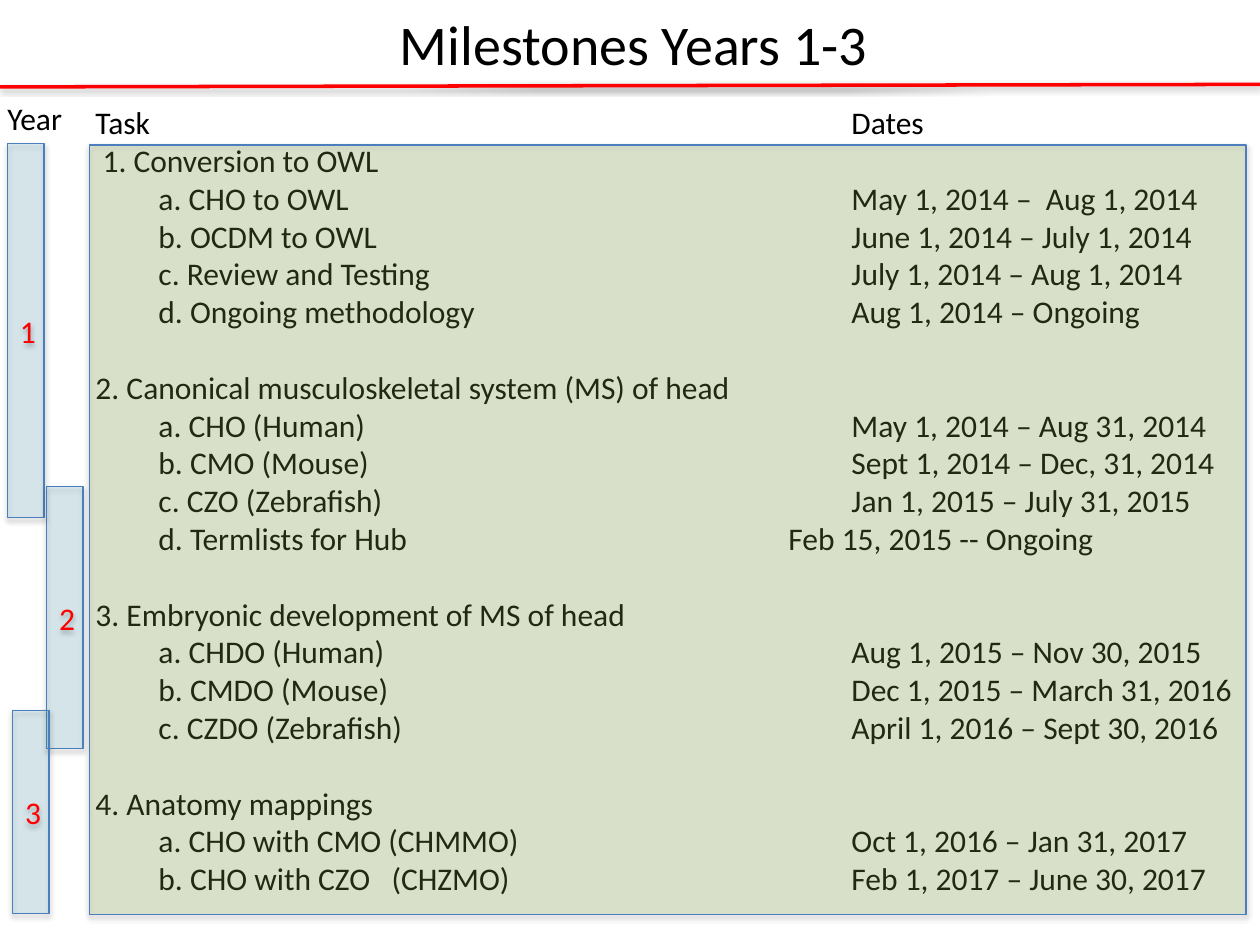
from lxml.etree import SubElement
from pptx import Presentation
from pptx.dml.color import RGBColor
from pptx.enum.shapes import MSO_CONNECTOR as LINE, MSO_SHAPE as SHAPE
from pptx.enum.text import MSO_ANCHOR as ANCHOR, PP_ALIGN as ALIGN
from pptx.oxml.ns import qn
from pptx.util import Inches, Pt

# Content
TITLE = "Milestones Years 1-3"
HEADER = ("Task", "Dates")
MILESTONES = [
    ("\u00a01. Conversion to OWL".replace("\u00a0", " "), [
        ("a. CHO to OWL", "May 1, 2014 –  Aug 1, 2014"),
        ("b. OCDM to OWL", "June 1, 2014 – July 1, 2014"),
        ("c. Review and Testing", "July 1, 2014 – Aug 1, 2014"),
        ("d. Ongoing methodology", "Aug 1, 2014 – Ongoing"),
    ]),
    ("2. Canonical musculoskeletal system (MS) of head", [
        ("a. CHO (Human)", "May 1, 2014 – Aug 31, 2014"),
        ("b. CMO (Mouse)", "Sept 1, 2014 – Dec, 31, 2014"),
        ("c. CZO (Zebrafish)", "Jan 1, 2015 – July 31, 2015"),
        ("d. Termlists for Hub", "Feb 15, 2015 -- Ongoing"),
    ]),
    ("3. Embryonic development of MS of head", [
        ("a. CHDO (Human)", "Aug 1, 2015 – Nov 30, 2015"),
        ("b. CMDO (Mouse)", "Dec 1, 2015 – March 31, 2016"),
        ("c. CZDO (Zebrafish)", "April 1, 2016 – Sept 30, 2016"),
    ]),
    ("4. Anatomy mappings", [
        ("a. CHO with CMO (CHMMO)", "Oct 1, 2016 – Jan 31, 2017"),
        ("b. CHO with CZO   (CHZMO)", "Feb 1, 2017 – June 30, 2017"),
    ]),
]
YEARS = [  # label, left, top, height
    ("1", 0.06, 1.14, 2.97),
    ("2", 0.37, 3.86, 2.08),
    ("3", 0.10, 5.64, 1.61),
]
YEAR_WIDTH = 0.29
TASK_TAB, DATE_TAB = 0.5, 6.0
EARLY_DATES = {"d. Termlists for Hub": 5.5}
LINE_PITCH = 21.6


def color(value):
    return RGBColor.from_string(value)


def style(para, size=18, ink="000000"):
    for span in para.runs:
        span.font.name = "Calibri"
        span.font.size = Pt(size)
        span.font.color.rgb = color(ink)


def add_shadow(properties, alpha, distance):
    effects = properties.find(qn("a:effectLst"))
    if effects is None:
        effects = SubElement(properties, qn("a:effectLst"))
    shadow = SubElement(effects, qn("a:outerShdw"), blurRad=str(Pt(3.1)),
                        dist=str(Pt(distance)), dir="5400000", rotWithShape="0")
    tint = SubElement(shadow, qn("a:srgbClr"), val="000000")
    SubElement(tint, qn("a:alpha"), val=str(alpha * 1000))


def add_panel(page, place, fill, alpha):
    panel = page.shapes.add_shape(SHAPE.RECTANGLE, *map(Inches, place))
    panel.fill.solid()
    panel.fill.fore_color.rgb = color(fill)
    tint = panel.fill._xPr.find(qn("a:solidFill"))[0]
    SubElement(tint, qn("a:alpha"), val=str(alpha * 1000))
    panel.line.color.rgb = color("4B7EBC")
    panel.line.width = Pt(0.75)
    panel.shadow.inherit = False
    add_shadow(panel._element.spPr, 35, 1.8)
    return panel


def add_text(page, place, text, size=18, align=None, wrap=True):
    box = page.shapes.add_textbox(*map(Inches, place))
    box.text_frame.word_wrap = wrap
    para = box.text_frame.paragraphs[0]
    para.text = text
    para.alignment = align
    style(para, size)
    return box


def set_tabs(para, stops):
    tabs = SubElement(para._p.get_or_add_pPr(), qn("a:tabLst"))
    for stop in stops:
        SubElement(tabs, qn("a:tab"), pos=str(Inches(stop)), algn="l")


def add_line(frame, text, stops=(), gap=0):
    para = frame.add_paragraph()
    para.text = text
    para.space_before = Pt(gap)
    set_tabs(para, stops)
    style(para)


deck = Presentation()
deck.slide_width, deck.slide_height = Inches(10), Inches(7.5)
page = deck.slides.add_slide(deck.slide_layouts[6])

# Task list with tabbed dates
tasks = add_text(page, (0.66, 0.77, 9.23, 6.77), "\t".join(HEADER))
frame = tasks.text_frame
set_tabs(frame.paragraphs[0], [DATE_TAB])
for index, (heading, steps) in enumerate(MILESTONES):
    add_line(frame, heading, gap=LINE_PITCH if index else 0)
    for task, dates in steps:
        stops = (TASK_TAB, EARLY_DATES.get(task, DATE_TAB))
        add_line(frame, f"\t{task}\t{dates}", stops)

# Tinted panel over the tasks
add_panel(page, (0.71, 1.15, 9.18, 6.11), "9BBB59", 22)

# Title and red rule
rule = page.shapes.add_connector(LINE.STRAIGHT, 0, Inches(0.69), Inches(10), Inches(0.67))
rule.line.color.rgb = color("FF0000")
rule.line.width = Pt(2)
add_shadow(rule._element.spPr, 38, 1.6)
add_text(page, (3.03, 0.03, 4, 0.64), TITLE, 32, ALIGN.CENTER, wrap=False)

# Year bars
add_text(page, (-0.04, 0.74, 0.74, 0.4), "Year")
for label, left, top, height in YEARS:
    bar = add_panel(page, (left, top, YEAR_WIDTH, height), "4BACC6", 17)
    bar.text_frame.vertical_anchor = ANCHOR.MIDDLE
    para = bar.text_frame.paragraphs[0]
    para.text = label
    para.alignment = ALIGN.CENTER
    style(para, ink="FF0000")

deck.save("out.pptx")
